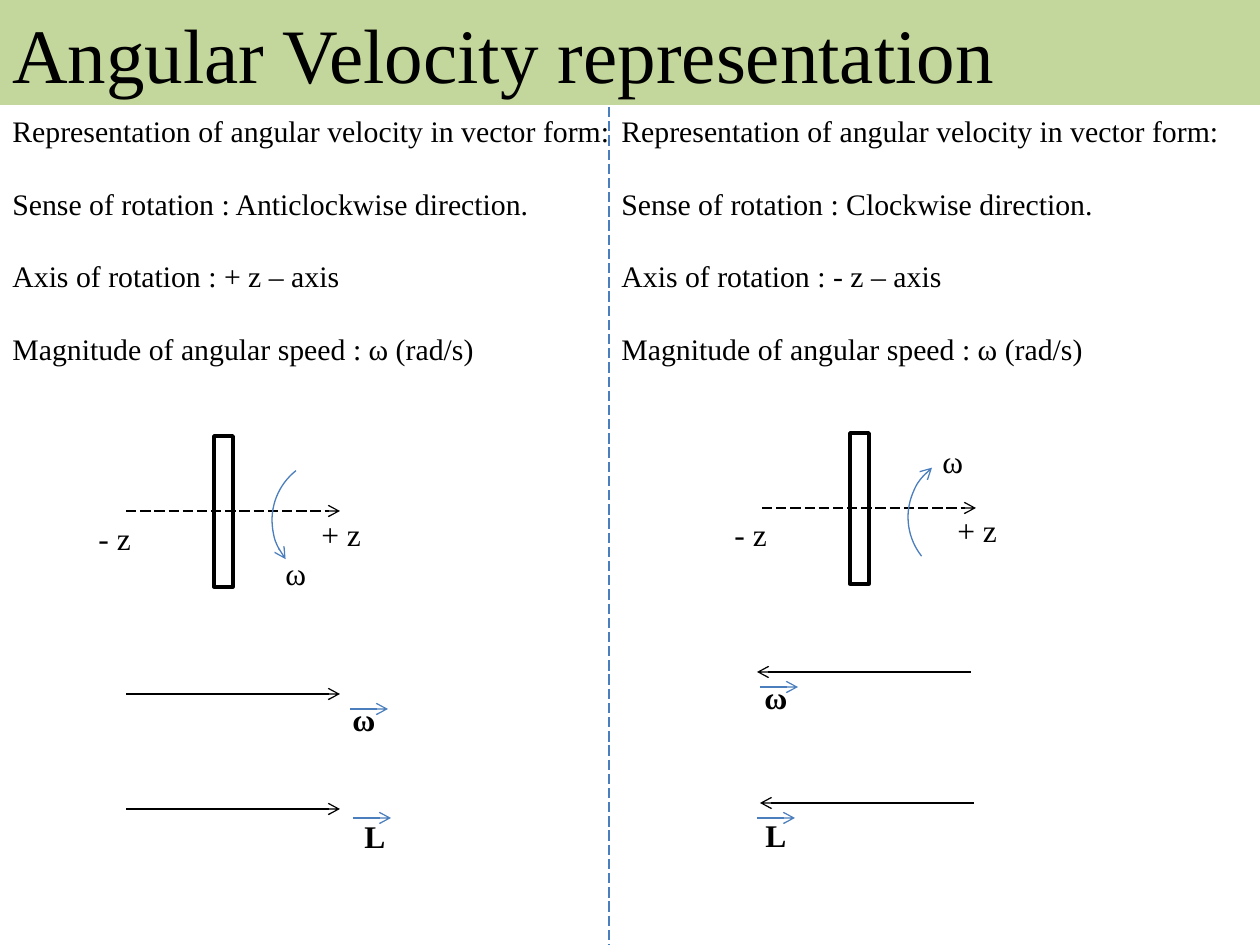
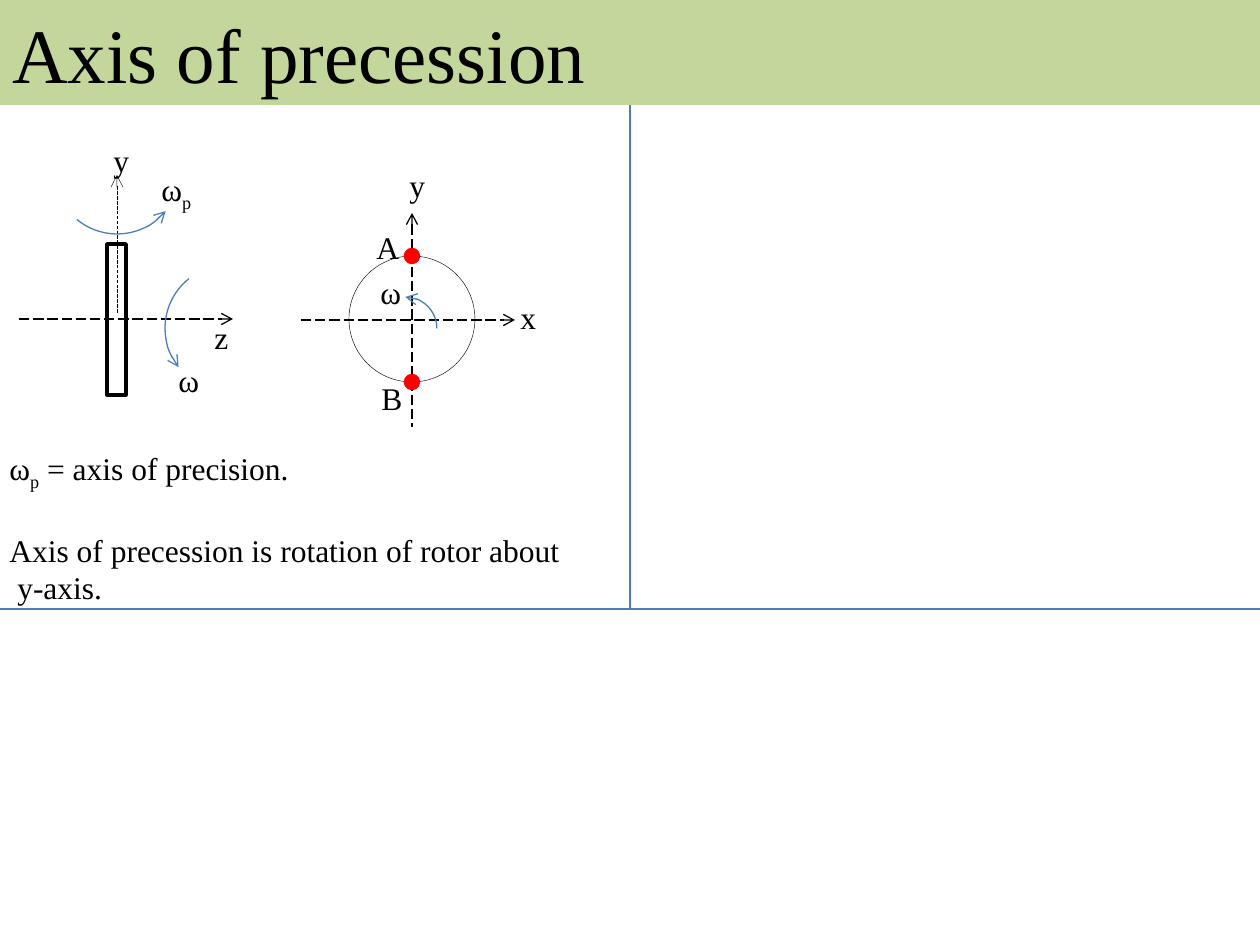
from dataclasses import dataclass

from lxml import etree
from pptx import Presentation
from pptx.dml.color import RGBColor
from pptx.enum.dml import MSO_LINE
from pptx.enum.shapes import MSO_CONNECTOR, MSO_SHAPE
from pptx.enum.text import MSO_ANCHOR, PP_ALIGN
from pptx.oxml.ns import qn
from pptx.util import Emu, Pt

RECT, OVAL, ARC = MSO_SHAPE.RECTANGLE, MSO_SHAPE.OVAL, MSO_SHAPE.ARC
STRAIGHT, DASH = MSO_CONNECTOR.STRAIGHT, MSO_LINE.LONG_DASH
LEFT, MIDDLE = PP_ALIGN.LEFT, MSO_ANCHOR.MIDDLE
HEAD, TAIL = "headEnd", "tailEnd"

WIDTH, HEIGHT, BAND = 1260, 945, 105


@dataclass(frozen=True)
class Theme:
    font: str = "Times New Roman"
    band: str = "C3D69B"
    ink: str = "000000"
    accent: str = "4B7EBC"
    mark: str = "FF0000"
    title: int = 44
    label: int = 18
    body: int = 17
    thin: float = 0.75
    hair: float = 0.25
    bold: int = 2


THEME = Theme()


def px(n):
    return Emu(round(n * 914400 / 126))


def style_line(line, color, width, dash=None, arrow=None):
    """Format a line; arrow names the end that carries the arrowhead."""
    line.color.rgb = RGBColor.from_string(color)
    line.width = Pt(width)
    if dash:
        line.dash_style = dash
    if arrow:
        ln = line._get_or_add_ln()
        etree.SubElement(ln, qn(f"a:{arrow}"), type="arrow")


def add_line(slide, x1, y1, x2, y2, color=THEME.ink, width=THEME.thin,
             dash=None, arrow=None):
    line = slide.shapes.add_connector(STRAIGHT, px(x1), px(y1), px(x2), px(y2))
    style_line(line.line, color, width, dash, arrow)
    etree.SubElement(line._element.spPr, qn("a:effectLst"))


def add_shape(slide, kind, x, y, w, h, fill=None, color=None,
              width=THEME.thin, arrow=None):
    sp = slide.shapes.add_shape(kind, px(x), px(y), px(w), px(h))
    sp.shadow.inherit = False
    if fill:
        sp.fill.solid()
        sp.fill.fore_color.rgb = RGBColor.from_string(fill)
    else:
        sp.fill.background()
    if color:
        style_line(sp.line, color, width, arrow=arrow)
    else:
        sp.line.fill.background()
    return sp


def add_arc(slide, x, y, size, arrow, rotation=0):
    arc = add_shape(slide, ARC, x, y, size, size, color=THEME.accent, arrow=arrow)
    arc.rotation = rotation


def write(p, text, size, bold=False):
    """Fill a paragraph; text between underscores becomes a subscript."""
    p.alignment = LEFT
    for i, part in enumerate(text.split("_")):
        if not part:
            continue
        r = p.add_run()
        r.text = part
        r.font.name, r.font.size, r.font.bold = THEME.font, Pt(size), bold
        r.font.color.rgb = RGBColor.from_string(THEME.ink)
        if i % 2:
            r._r.get_or_add_rPr().set("baseline", "-25000")


def add_text(slide, x, y, w, h, lines, size=THEME.label, bold=False):
    tf = slide.shapes.add_textbox(px(x), px(y), px(w), px(h)).text_frame
    tf.word_wrap = True
    for i, text in enumerate(lines):
        write(tf.add_paragraph() if i else tf.paragraphs[0], text, size, bold)
    return tf.paragraphs


def add_label(slide, text, x, y, bold=False):
    add_text(slide, x, y, 81 if len(text) > 1 else 32, 50, [text], bold=bold)


def add_labels(slide, x, y, labels):
    for text, dx, dy in labels:
        add_label(slide, text, x + dx, y + dy)


def titled_slide(prs, title):
    slide = prs.slides.add_slide(prs.slide_layouts[6])
    tf = add_shape(slide, RECT, 0, 0, WIDTH, BAND, fill=THEME.band).text_frame
    tf.vertical_anchor = MIDDLE
    write(tf.paragraphs[0], title, THEME.title)
    return slide


def rotor(slide, x, y, spin_arrow, labels):
    """Disc seen edge-on; (x, y) is the start of its dashed z axis."""
    add_line(slide, x, y, x + 214, y, dash=DASH, arrow=TAIL)
    add_shape(slide, RECT, x + 88, y - 75, 19, 151, color=THEME.ink, width=THEME.bold)
    add_arc(slide, x + 146, y - 54, 126, spin_arrow, 231.7)
    add_labels(slide, x, y, labels)


def vector(slide, x, y, name, arrow, label, bar):
    """Long arrow from (x, y), with its bold name and the small arrow above it."""
    add_line(slide, x, y, x + 214, y, arrow=arrow)
    add_label(slide, name, x + label[0], y + label[1], bold=True)
    bar_x, bar_y = x + bar[0], y + bar[1]
    add_line(slide, bar_x, bar_y, bar_x + 38, bar_y, THEME.accent, arrow=TAIL)


def rotation_facts(slide, x, y, sense, axis):
    paragraphs = add_text(slide, x, y, 658, 265, [
        "Representation of angular velocity in vector form:",
        f"Sense of rotation : {sense} direction.",
        f"Axis of rotation : {axis} z – axis",
        "Magnitude of angular speed : ω (rad/s)",
    ], THEME.body)
    for p in paragraphs[1:]:
        p.space_before = Pt(21)


def face_view(slide, cx, cy):
    """Disc seen face-on, centred on (cx, cy), with points A and B."""
    radius, dot = 63, 13
    add_shape(slide, OVAL, cx - radius, cy - radius, 2 * radius, 2 * radius,
              color=THEME.ink, width=THEME.hair)
    add_line(slide, cx - 111, cy + 1, cx + 103, cy + 1, dash=DASH, arrow=TAIL)
    add_line(slide, cx, cy - 106, cx, cy + 108, dash=DASH, arrow=HEAD)
    for dot_y in (cy - radius, cy + radius):
        add_shape(slide, OVAL, cx - dot / 2, dot_y - dot / 2, dot, dot,
                  THEME.mark, THEME.mark, THEME.bold)
    add_arc(slide, cx - 38, cy - 22, 63, HEAD)
    add_labels(slide, cx, cy, [("y", -15, -159), ("x", 96, -27), ("A", -48, -97),
                               ("B", -43, 54), ("ω", -44, -52)])


def precessing_rotor(slide, x, y):
    rotor(slide, x, y, HEAD, [("z", 183, -7), ("ω", 147, 36)])
    add_line(slide, x + 98, y - 144, x + 98, y - 5, width=THEME.hair,
             dash=DASH, arrow=HEAD)
    add_arc(slide, x + 35, y - 211, 126, HEAD, 129.6)
    add_labels(slide, x, y, [("y", 82, -184), ("ω_p_", 130, -155)])


def precession_note(slide, x, y):
    _, meaning, axis = add_text(slide, x, y, 799, 204, [
        "ω_p_ = axis of precision.",
        "Axis of precession is rotation of rotor about",
        "y-axis.",
    ])
    meaning.space_before = Pt(22)
    axis._p.get_or_add_pPr().set("marL", str(Pt(4.5)))


def velocity_slide(prs):
    slide = titled_slide(prs, "Angular Velocity representation")
    middle, top = 609, 107
    add_line(slide, middle, top, middle, HEIGHT, THEME.accent, dash=DASH)

    rotation_facts(slide, 0, top, "Anticlockwise", "+")
    rotor(slide, 126, 511, HEAD, [("+ z", 183, -2), ("- z", -40, 2), ("ω", 147, 37)])
    vector(slide, 126, 694, "ω", TAIL, (214, 0), (224, 15))
    vector(slide, 126, 809, "L", TAIL, (226, 2), (227, 9))

    rotation_facts(slide, middle, top, "Clockwise", "-")
    rotor(slide, 762, 508, TAIL, [("+ z", 183, -3), ("- z", -40, 1), ("ω", 168, -72)])
    vector(slide, 757, 672, "ω", HEAD, (-5, 0), (3, 15))
    vector(slide, 760, 803, "L", HEAD, (-7, 7), (-3, 15))


def precession_slide(prs):
    slide = titled_slide(prs, "Axis of precession")
    middle, floor = WIDTH // 2, 609
    precessing_rotor(slide, 19, 319)
    face_view(slide, 412, 319)
    precession_note(slide, -3, 443)
    add_line(slide, middle, BAND, middle, floor, THEME.accent)
    for x in (0, middle):
        add_line(slide, x, floor, x + middle, floor, THEME.accent)


def main():
    prs = Presentation()
    prs.slide_width, prs.slide_height = px(WIDTH), px(HEIGHT)
    velocity_slide(prs)
    precession_slide(prs)
    prs.save("out.pptx")


if __name__ == "__main__":
    main()
